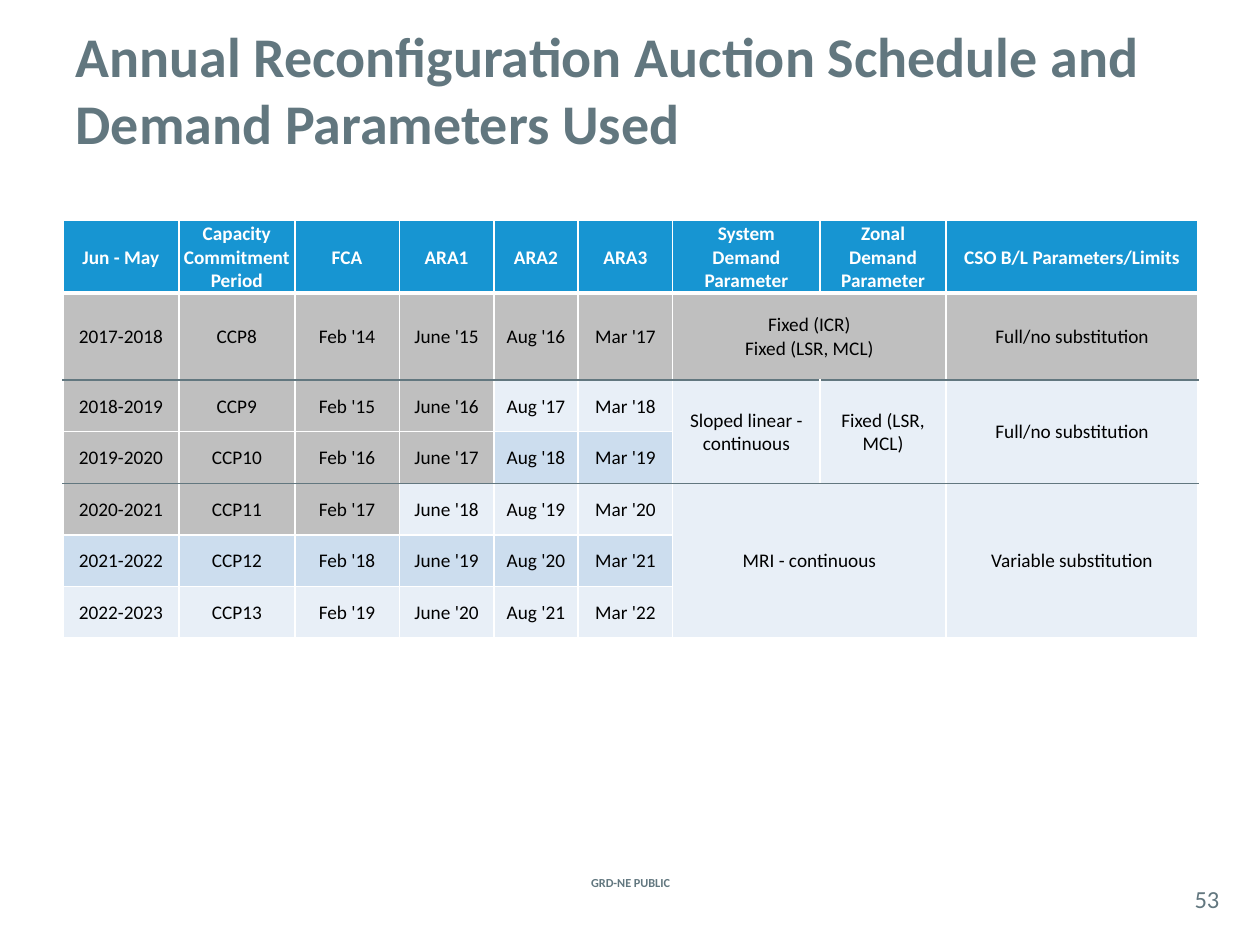
import pptx
import pptx.dml.color
import pptx.enum.text
import pptx.oxml
import pptx.oxml.ns
import pptx.util

Inches, Pt = pptx.util.Inches, pptx.util.Pt
ALIGN = pptx.enum.text.PP_ALIGN
MIDDLE = pptx.enum.text.MSO_ANCHOR.MIDDLE

SLATE, WHITE, BLACK = "62777F", "FFFFFF", "000000"
HEADER_BLUE, PAST_GREY, BANDS = "1795D2", "BFBFBF", ("E8EFF7", "CCDDEE")

TITLE = "Annual Reconfiguration Auction Schedule and Demand Parameters Used"
FOOTER, PAGE_NUMBER = "GRD-NE PUBLIC", "53"

HEADERS = ["Jun - May", "Capacity Commitment Period", "FCA", "ARA1", "ARA2", "ARA3",
           "System\nDemand Parameter", "Zonal\nDemand Parameter",
           "CSO B/L Parameters/Limits"]
AUCTIONS = [
    ("2017-2018", "CCP8", "Feb '14", "June '15", "Aug '16", "Mar '17"),
    ("2018-2019", "CCP9", "Feb '15", "June '16", "Aug '17", "Mar '18"),
    ("2019-2020", "CCP10", "Feb '16", "June '17", "Aug '18", "Mar '19"),
    ("2020-2021", "CCP11", "Feb '17", "June '18", "Aug '19", "Mar '20"),
    ("2021-2022", "CCP12", "Feb '18", "June '19", "Aug '20", "Mar '21"),
    ("2022-2023", "CCP13", "Feb '19", "June '20", "Aug '21", "Mar '22"),
]
# row, column, row span, column span, text
PARAMETERS = [
    (1, 6, 1, 2, "Fixed (ICR)\nFixed (LSR, MCL)"),
    (1, 8, 1, 1, "Full/no substitution"),
    (2, 6, 2, 1, "Sloped linear - continuous"),
    (2, 7, 2, 1, "Fixed (LSR, MCL)"),
    (2, 8, 2, 1, "Full/no substitution"),
    (4, 6, 3, 2, "MRI - continuous"),
    (4, 8, 3, 1, "Variable substitution"),
]
PAST_COLUMNS = {1: 9, 2: 4, 3: 4, 4: 3}  # grey cells counted from the left
RULED_ROWS = (2, 4)  # rows with a slate line above
COLUMN_WIDTHS = [0.92, 0.92, 0.83, 0.75, 0.67, 0.75, 1.17, 1, 2]
ROW_HEIGHTS = [0.41, 0.69] + [0.41] * 5


def rgb(value):
    return pptx.dml.color.RGBColor.from_string(value)


def write(frame, text, size, color, bold=False, align=ALIGN.CENTER):
    frame.word_wrap = True
    for index, line in enumerate(text.split("\n")):
        paragraph = frame.add_paragraph() if index else frame.paragraphs[0]
        paragraph.alignment = align
        run = paragraph.add_run()
        run.text = line
        run.font.name, run.font.size, run.font.bold = "Calibri", Pt(size), bold
        run.font.color.rgb = rgb(color)


def add_label(slide, box, text, size, bold=False):
    frame = slide.shapes.add_textbox(*map(Inches, box)).text_frame
    frame.margin_left = frame.margin_right = frame.margin_top = frame.margin_bottom = 0
    frame.vertical_anchor = MIDDLE
    write(frame, text, size, SLATE, bold)


def set_borders(cell, top, bottom):
    edges = {"L": (WHITE, 1), "R": (WHITE, 1), "T": top, "B": bottom}
    properties = cell._tc.get_or_add_tcPr()
    for side, (color, width) in edges.items():
        properties.append(pptx.oxml.parse_xml(
            f'<a:ln{side} {pptx.oxml.ns.nsdecls("a")} w="{Pt(width)}">'
            f'<a:solidFill><a:srgbClr val="{color}"/></a:solidFill></a:ln{side}>'))


def edge_above(row):
    if row == 1:
        return WHITE, 3
    return (SLATE if row in RULED_ROWS else WHITE), 1


def fill_color(row, column):
    if row == 0:
        return HEADER_BLUE
    return PAST_GREY if column < PAST_COLUMNS.get(row, 0) else BANDS[row % 2]


def fill_block(table, row, column, row_span, column_span, text):
    """Style the cells of one block, merge them and write the text."""
    for r in range(row, row + row_span):
        for c in range(column, column + column_span):
            cell = table.cell(r, c)
            set_borders(cell, edge_above(r), edge_above(row + row_span))
            cell.fill.solid()
            cell.fill.fore_color.rgb = rgb(fill_color(r, c))
    origin = table.cell(row, column)
    if row_span * column_span > 1:
        origin.merge(table.cell(row + row_span - 1, column + column_span - 1))
    origin.margin_left = origin.margin_right = origin.margin_top = Inches(0.01)
    origin.margin_bottom = 0
    origin.vertical_anchor = MIDDLE
    is_header = row == 0
    write(origin.text_frame, text, 11, WHITE if is_header else BLACK, is_header)


def add_schedule(slide):
    table = slide.shapes.add_table(
        len(ROW_HEIGHTS), len(COLUMN_WIDTHS), Inches(0.5), Inches(1.75),
        Inches(sum(COLUMN_WIDTHS)), Inches(sum(ROW_HEIGHTS))).table
    for column, width in zip(table.columns, COLUMN_WIDTHS):
        column.width = Inches(width)
    for row, height in zip(table.rows, ROW_HEIGHTS):
        row.height = Inches(height)
    singles = [(r, c, 1, 1, text) for r, texts in enumerate([HEADERS, *AUCTIONS])
               for c, text in enumerate(texts)]
    for block in singles + PARAMETERS:
        fill_block(table, *block)


def main():
    deck = pptx.Presentation()
    deck.slide_width, deck.slide_height = Inches(10), Inches(7.5)
    slide = deck.slides.add_slide(deck.slide_layouts[5])

    title = slide.shapes.title
    title.left, title.top, title.width, title.height = map(Inches, (0.5, 0.08, 9, 1.25))
    title.text_frame.vertical_anchor = MIDDLE
    title.text_frame.auto_size = pptx.enum.text.MSO_AUTO_SIZE.NONE
    write(title.text_frame, TITLE, 32, SLATE, True, ALIGN.LEFT)

    add_schedule(slide)
    add_label(slide, (4.27, 6.92, 1.47, 0.17), FOOTER, 7, True)
    add_label(slide, (9.33, 6.92, 0.5, 0.42), PAGE_NUMBER, 14)
    deck.save("out.pptx")


if __name__ == "__main__":
    main()
